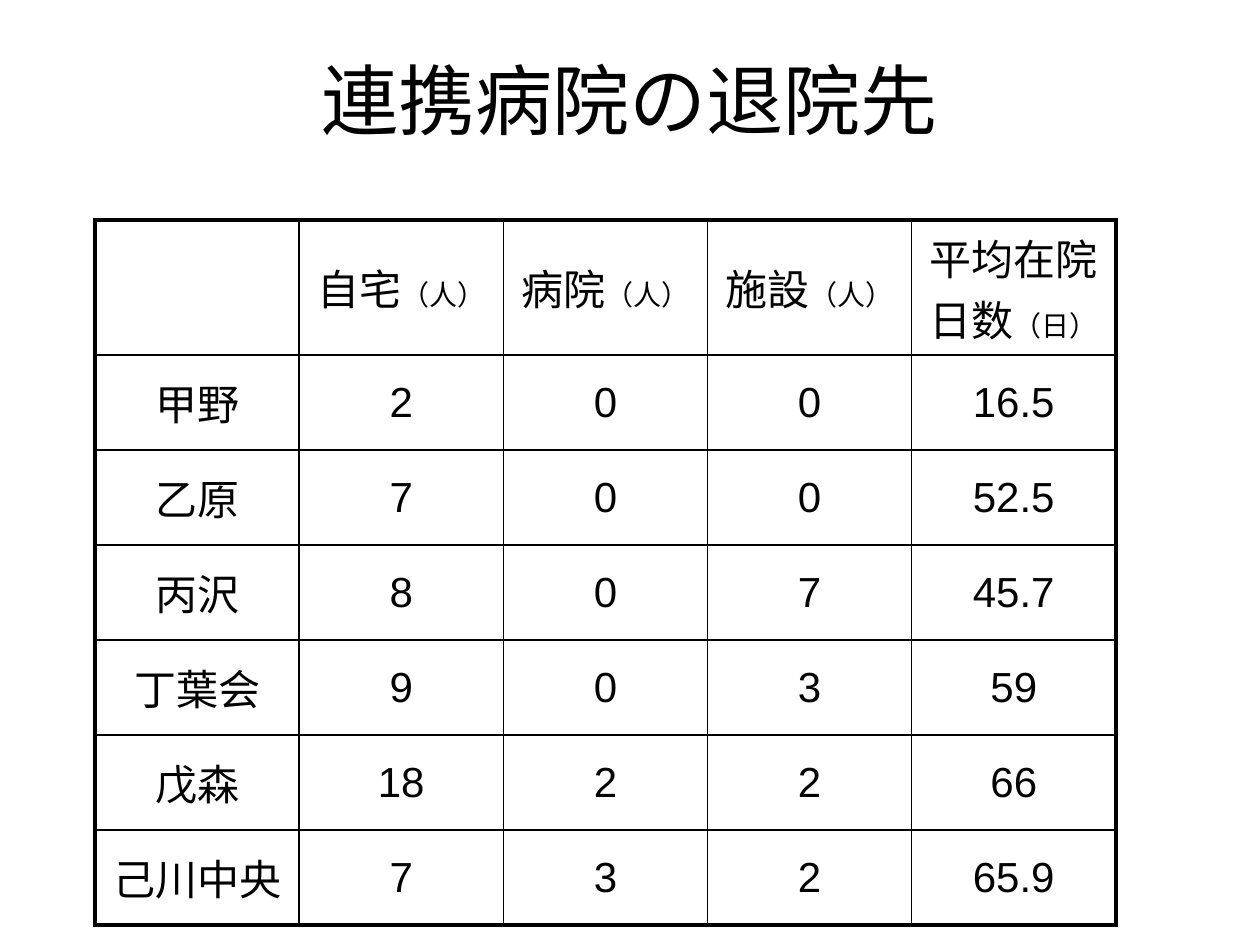
from pptx import Presentation
from pptx import util as u
from pptx.dml.color import RGBColor
from pptx.enum import text
from pptx.oxml import parse_xml
from pptx.oxml.ns import nsdecls

PX = 914400 // 126
INK = {"text": "000000", "line": "000000"}
HEADS = [("", ""), ("自宅", "（人）"), ("病院", "（人）"),
         ("施設", "（人）"), ("平均在院日数", "（日）")]
ROWS = [("甲野", "2", "0", "0", "16.5"),
        ("乙原", "7", "0", "0", "52.5"),
        ("丙沢", "8", "0", "7", "45.7"),
        ("丁葉会", "9", "0", "3", "59"),
        ("戊森", "18", "2", "2", "66"),
        ("己川中央", "7", "3", "2", "65.9")]


def px(n):
    return u.Emu(n * PX)


def style(run, size, face):
    run.font.size = u.Pt(size)
    run.font.name = face
    run.font.color.rgb = RGBColor.from_string(INK["text"])


def title(slide, x, y, w, h):
    frame = slide.shapes.add_textbox(px(x), px(y), px(w), px(h)).text_frame
    frame.word_wrap = True
    frame.vertical_anchor = text.MSO_ANCHOR.MIDDLE
    frame.margin_bottom = px(42)
    frame.text = "連携病院の退院先"
    para = frame.paragraphs[0]
    para.alignment = text.PP_ALIGN.CENTER
    style(para.runs[0], 44, "Calibri")


def edge(cell, side, width):
    cell._tc.get_or_add_tcPr().append(parse_xml(
        f'<a:ln{side} {nsdecls("a")} w="{u.Pt(width)}"><a:solidFill>'
        f'<a:srgbClr val="{INK["line"]}"/></a:solidFill></a:ln{side}>'))


def fill(cell, parts):
    cell.vertical_anchor = text.MSO_ANCHOR.MIDDLE
    para = cell.text_frame.paragraphs[0]
    para.alignment = text.PP_ALIGN.CENTER
    para.space_before = u.Pt(4.8)
    for part, size in zip(parts, (24, 16)):
        if part:
            run = para.add_run()
            run.text = part
            style(run, size, "Arial")


def grid(slide, x, y, w, head, row):
    data = [HEADS] + [[(val,) for val in line] for line in ROWS]
    rows, cols = len(data), len(HEADS)
    table = slide.shapes.add_table(
        rows, cols, px(x), px(y), px(w), px(head + row * len(ROWS))).table
    table.first_row = table.horz_banding = False
    for col in table.columns:
        col.width = px(w) // cols
    for r, line in enumerate(data):
        table.rows[r].height = px(row if r else head)
        for c, parts in enumerate(line):
            cell = table.cell(r, c)
            fill(cell, parts)
            outer = {"L": c == 0, "R": c == cols - 1,
                     "T": r == 0, "B": r == rows - 1}
            for side, rim in outer.items():
                edge(cell, side, 2.25 if rim else 1)
            cell.fill.background()


def main():
    deck = Presentation()
    deck.slide_width, deck.slide_height = px(1260), px(945)
    slide = deck.slides.add_slide(deck.slide_layouts[6])
    title(slide, 63, 38, 1134, 158)
    grid(slide, 95, 220, 1021, 135, 95)
    deck.save("out.pptx")


if __name__ == "__main__":
    main()
